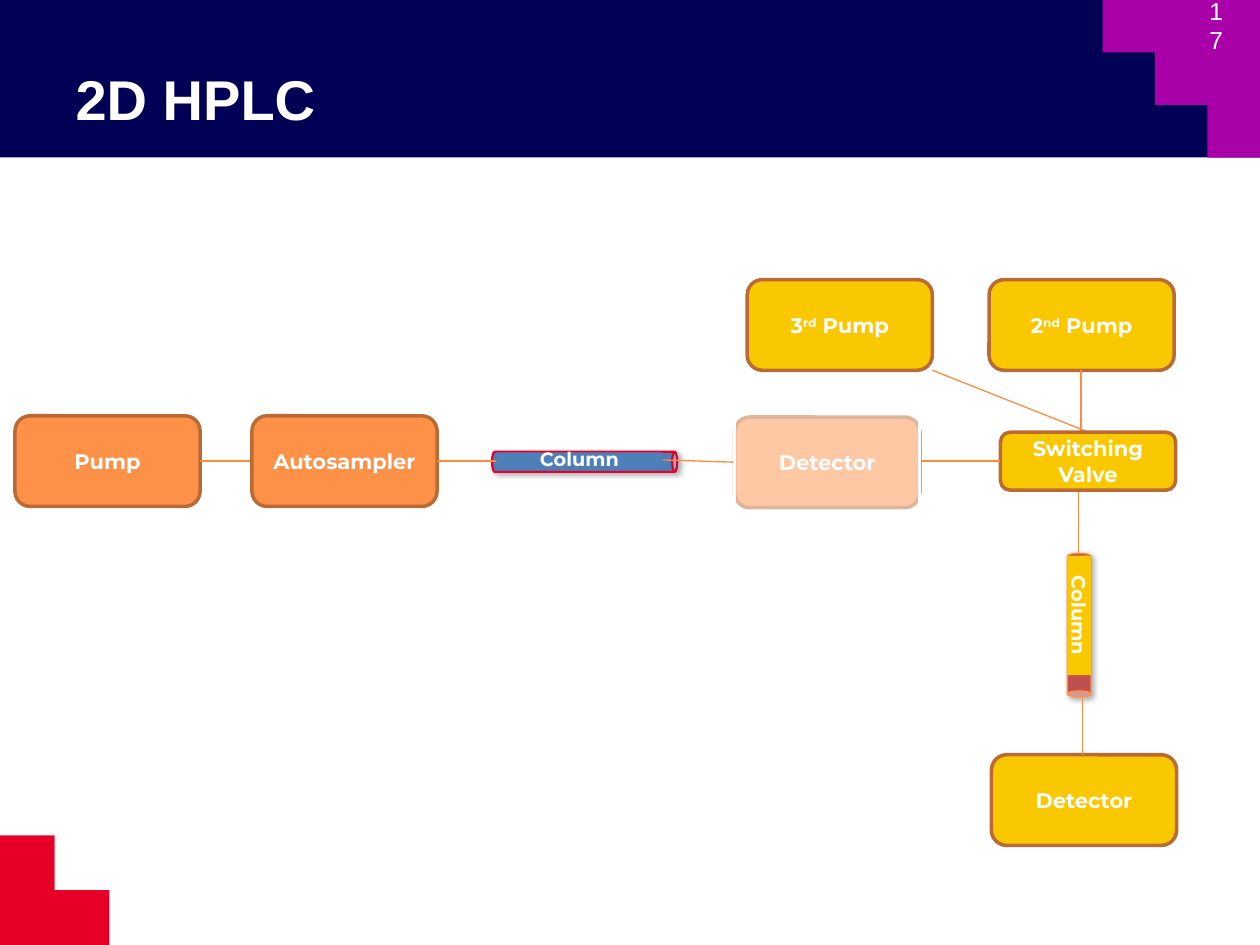
from lxml import etree
from pptx import Presentation
from pptx.dml.color import RGBColor
from pptx.enum import shapes, text
from pptx.oxml import ns, parse_xml
from pptx.util import Pt

NAVY, RED, PURPLE, WHITE = "000054", "E60028", "AA00AA", "FFFFFF"
ORANGE, YELLOW, BROWN, PIPE = "FC9147", "FAC800", "BA6B35", "FB8D41"
SHAPE = shapes.MSO_SHAPE
UNIT_WIDTH, UNIT_HEIGHT = 105.8, 51.8


def color(hex_string):
    return RGBColor.from_string(hex_string)


def style(shape, fill, line=None, weight=0):
    shape.shadow.inherit = False
    shape.fill.solid()
    shape.fill.fore_color.rgb = color(fill)
    if line:
        shape.line.color.rgb = color(line)
        shape.line.width = Pt(weight)
    else:
        shape.line.fill.background()


def add_block(page, kind, left, top, width, height, fill, line=None, weight=0):
    shape = page.shapes.add_shape(kind, Pt(left), Pt(top), Pt(width), Pt(height))
    style(shape, fill, line, weight)
    return shape


def format_span(span, size, font="Montserrat", bold=True):
    span.font.size = Pt(size)
    span.font.name = font
    span.font.bold = bold
    span.font.color.rgb = color(WHITE)


def add_label(shape, parts, size):
    """Centre the parts in the shape; every second part is superscript."""
    frame = shape.text_frame
    frame.word_wrap = True
    frame.vertical_anchor = text.MSO_ANCHOR.MIDDLE
    para = frame.paragraphs[0]
    para.alignment = text.PP_ALIGN.CENTER
    for index, part in enumerate(parts):
        span = para.add_run()
        span.text = part
        format_span(span, size)
        if index % 2:
            span.font._element.set("baseline", "30000")


def add_unit(page, left, top, parts, fill, width=UNIT_WIDTH, height=UNIT_HEIGHT):
    unit = add_block(page, SHAPE.ROUNDED_RECTANGLE, left, top, width, height,
                     fill, BROWN, 2)
    add_label(unit, parts, 12)


def add_pipe(page, x1, y1, x2, y2):
    pipe = page.shapes.add_connector(shapes.MSO_CONNECTOR.STRAIGHT,
                                     Pt(x1), Pt(y1), Pt(x2), Pt(y2))
    pipe.line.color.rgb = color(PIPE)
    pipe.line.width = Pt(0.75)
    etree.SubElement(pipe._element.spPr, ns.qn("a:effectLst"))


def add_can(page, left, top, width, height, rotation, fill, line, weight):
    can = add_block(page, SHAPE.CAN, left, top, width, height, fill, line, weight)
    can.rotation = rotation
    can.adjustments[0] = 0.25
    effects = can._element.spPr.find(ns.qn("a:effectLst"))
    effects.append(parse_xml(
        f'<a:outerShdw {ns.nsdecls("a")} blurRad="{Pt(3)}" dist="{Pt(2)}" '
        'dir="2700000" rotWithShape="0"><a:srgbClr val="808080">'
        '<a:alpha val="60000"/></a:srgbClr></a:outerShdw>'))


def add_column_label(page, left, top, width, height, fill, rotation=0):
    label = add_block(page, SHAPE.RECTANGLE, left, top, width, height, fill)
    label.rotation = rotation
    frame = label.text_frame
    frame.margin_left = frame.margin_right = 0
    frame.margin_top = frame.margin_bottom = 0
    add_label(label, ["Column"], 11)


def build_header(page, left, top, width, height):
    band = add_block(page, SHAPE.RECTANGLE, left, top, width, height, NAVY)

    # Purple staircase, three equal steps
    step, right = height / 3, left + width
    points = [(right, top)]
    for index in range(3):
        x = right - (3 - index) * step
        points += [(x, top + index * step), (x, top + (index + 1) * step)]
    points.append((right, top + height))
    builder = page.shapes.build_freeform(Pt(points[0][0]), Pt(points[0][1]))
    builder.add_line_segments([(Pt(x), Pt(y)) for x, y in points[1:]])
    style(builder.convert_to_shape(), PURPLE)

    # Title, in front of the band
    title = page.shapes.title
    band._element.getparent().append(title._element)
    title.left, title.top = Pt(left + 36), Pt(top + 21.6)
    title.width, title.height = Pt(648), Pt(68.4)
    title.text_frame.text = "2D HPLC"
    title.text_frame.vertical_anchor = text.MSO_ANCHOR.MIDDLE
    para = title.text_frame.paragraphs[0]
    para.alignment = text.PP_ALIGN.LEFT
    format_span(para.runs[0], 32, "Arial")

    # Page number
    number = page.shapes.add_textbox(Pt(right - 36), Pt(top + 1.4), Pt(23.8), Pt(25.9))
    frame = number.text_frame
    frame.text = "17"
    frame.word_wrap = True
    frame.vertical_anchor = text.MSO_ANCHOR.MIDDLE
    format_span(frame.paragraphs[0].runs[0], 14, "Arial", False)


def build_first_dimension(page, left, top):
    middle = top + UNIT_HEIGHT / 2
    add_can(page, left + 319.7, top - 26.6, 11.5, UNIT_WIDTH, 90, "4D7DB7", RED, 1.25)
    for index, name in enumerate(["Pump", "Autosampler"]):
        x = left + index * 135.4
        add_unit(page, x, top, [name], ORANGE)
        add_pipe(page, x + UNIT_WIDTH, middle, x + 147, middle)
    add_column_label(page, left + 275, middle - 5, 95, 8, "4D7FB9")
    add_pipe(page, left + 370, middle - 0.7, left + 413.3, middle + 0.7)
    add_unit(page, left + 411.2, top + 0.7, ["Detector"], ORANGE)


def build_second_dimension(page, left, top):
    # Pumps feeding the valve
    pump_bottom = top + UNIT_HEIGHT
    add_unit(page, left, top, ["3", "rd", " Pump"], YELLOW)
    add_pipe(page, left + 195.1, top + 87.2, left + UNIT_WIDTH, pump_bottom)
    add_unit(page, left + 138.2, top, ["2", "nd", " Pump"], YELLOW)
    add_pipe(page, left + 190.8, pump_bottom, left + 190.8, top + 88.6)

    # Column and detector below the valve
    add_can(page, left + 182.8, top + 156.3, 13.7, 82.1, 180, "C0504D", ORANGE, 0.75)
    add_unit(page, left + 139.6, top + 271.5, ["Detector"], YELLOW)
    add_pipe(page, left + 189.3, top + 120.3, left + 189.3, top + 157)
    add_column_label(page, left + 155.5, top + 185, 68.4, 13.7, YELLOW, 90)
    add_pipe(page, left + 191.5, top + 239.1, left + 191.5, top + 271.5)

    # Switching valve and its inlet
    add_unit(page, left + 144.7, top + 87.2, ["Switching Valve"], YELLOW, 100.1, 33.1)
    add_pipe(page, left + 88.5, top + 103.7, left + 144.7, top + 103.7)


def build_veil(page, left, top, width, height):
    veil = add_block(page, SHAPE.RECTANGLE, left, top, width, height, WHITE, WHITE, 2)
    fill = veil._element.spPr.find(ns.qn("a:solidFill"))
    etree.SubElement(fill[0], ns.qn("a:alpha"), val="50000")


def main():
    deck = Presentation()
    deck.slide_width, deck.slide_height = Pt(720), Pt(540)
    page = deck.slides.add_slide(deck.slide_layouts[5])
    build_header(page, 0, 0, 720, 90)
    add_block(page, SHAPE.CORNER, 0, 477.4, 62.6, 62.6, RED)
    build_first_dimension(page, 8.6, 237.6)
    build_second_dimension(page, 427, 159.8)
    build_veil(page, 419.8, 228.2, UNIT_WIDTH, 68.4)
    deck.save("out.pptx")


if __name__ == "__main__":
    main()
